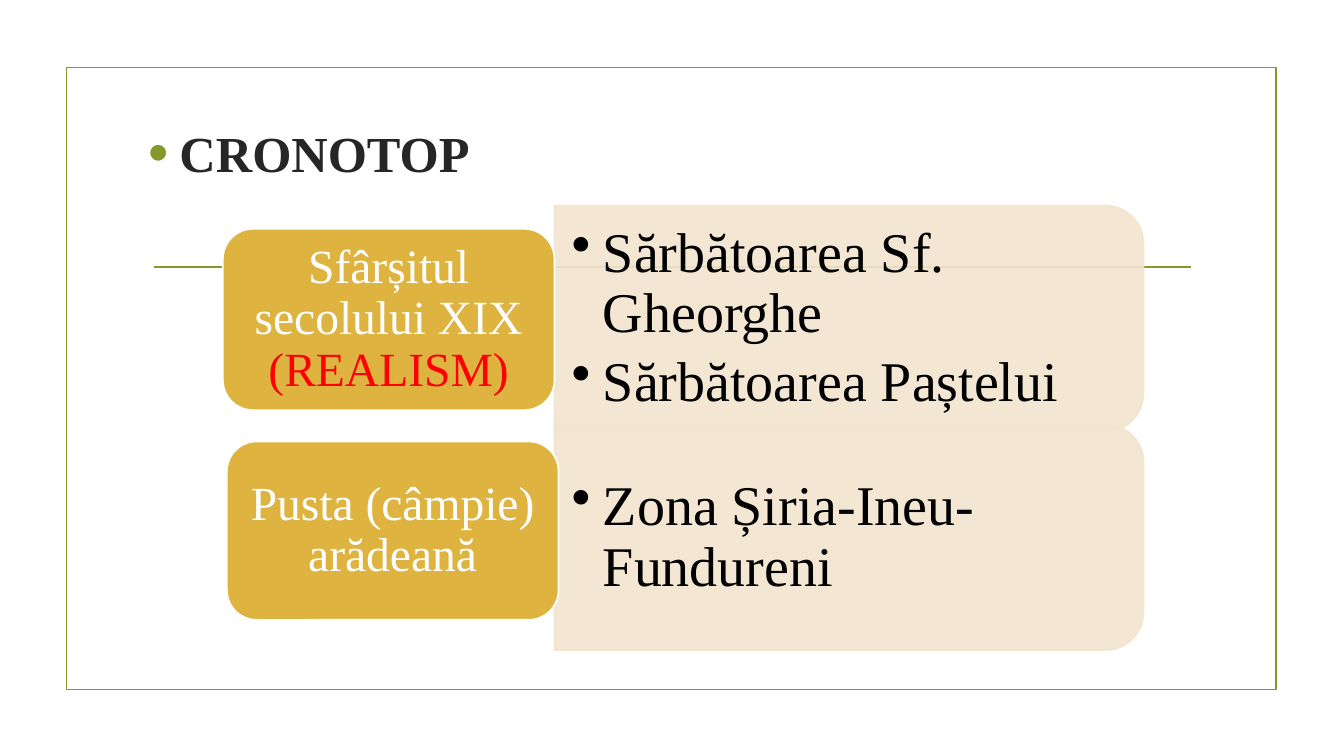
"""Build the CRONOTOP slide: two time-and-place labels, each with its list panel."""
from dataclasses import dataclass

from lxml.etree import SubElement
from pptx import Presentation
from pptx.dml.color import RGBColor
from pptx.enum.shapes import MSO_CONNECTOR, MSO_SHAPE
from pptx.enum.text import MSO_ANCHOR, MSO_AUTO_SIZE, PP_ALIGN
from pptx.oxml.ns import qn
from pptx.util import Emu, Pt

SCALE = 9144
FONT = "Times New Roman"
COLORS = {
    "green": "83992A",
    "dark": "262626",
    "cream": "F2E5CF",
    "gold": "DEB340",
    "white": "FFFFFF",
    "red": "FF0000",
    "black": "000000",
}


@dataclass(frozen=True)
class Row:
    """A gold label, its coloured text runs and the items of its panel."""

    label_box: tuple[int, int, int, int]
    label: tuple[tuple[str, str], ...]
    items: tuple[str, ...]


ROWS = (
    Row(
        (221, 227, 329, 180),
        (("Sfârșitul secolului XIX ", "white"), ("(REALISM)", "red")),
        ("Sărbătoarea Sf. Gheorghe", "Sărbătoarea Paștelui"),
    ),
    Row(
        (225, 438, 329, 177),
        (("Pusta (câmpie) arădeană", "white"),),
        ("Zona Șiria-Ineu-Fundureni",),
    ),
)
PANEL_BOX = (730, 24, 224, 584)
ITEMS_BOX = (550, 215, 573, 203)
ROW_PITCH = 217


def px(*values: int) -> list[Emu]:
    """Turn px into EMU."""
    return [Emu(v * SCALE) for v in values]


def rgb(name: str) -> RGBColor:
    """Look up a named colour."""
    return RGBColor.from_string(COLORS[name])


def shift(box: tuple[int, int, int, int], dy: int) -> tuple[int, int, int, int]:
    """Move a box down by dy px."""
    left, top, width, height = box
    return left, top + dy, width, height


def add_run(p, text: str, size: int, color: str, bold: bool = False) -> None:
    """Append one formatted run to a paragraph."""
    r = p.add_run()
    r.text = text
    r.font.name = FONT
    r.font.size = Pt(size)
    r.font.bold = bold
    r.font.color.rgb = rgb(color)


def add_bullet(p, color: str, percent: int = 100) -> None:
    """Give a paragraph a hanging round bullet."""
    pPr = p._p.get_or_add_pPr()
    indent = px(31)[0]
    pPr.set("marL", str(indent))
    pPr.set("indent", str(-indent))
    clr = SubElement(pPr, qn("a:buClr"))
    SubElement(clr, qn("a:srgbClr"), val=COLORS[color])
    SubElement(pPr, qn("a:buSzPct"), val=str(percent * 1000))
    SubElement(pPr, qn("a:buChar"), char="•")


def set_frame(tf, dx: int, dy: int) -> None:
    """Wrap and centre a text frame vertically with the given insets."""
    tf.word_wrap = True
    tf.vertical_anchor = MSO_ANCHOR.MIDDLE
    tf.margin_left = tf.margin_right = px(dx)[0]
    tf.margin_top = tf.margin_bottom = px(dy)[0]


def add_box(s, kind: MSO_SHAPE, box: tuple[int, int, int, int],
            fill: str | None, line: str):
    """Add a flat preset shape."""
    sp = s.shapes.add_shape(kind, *px(*box))
    sp.shadow.inherit = False
    if fill:
        sp.fill.solid()
        sp.fill.fore_color.rgb = rgb(fill)
    else:
        sp.fill.background()
    sp.line.color.rgb = rgb(line)
    sp.line.width = Pt(1.25)
    return sp


def add_backdrop(s) -> None:
    """Draw the green frame and rule."""
    add_box(s, MSO_SHAPE.RECTANGLE, (66, 67, 1200, 617), None, "green")
    rule = s.shapes.add_connector(MSO_CONNECTOR.STRAIGHT, *px(153, 265, 1181, 265))
    rule.line.color.rgb = rgb("green")
    rule.line.width = Pt(1.25)
    SubElement(rule._element.spPr, qn("a:effectLst"))


def fill_body(s) -> None:
    """Place the heading bullet in the body placeholder."""
    title = s.shapes.title._element
    title.getparent().remove(title)
    sp = s.placeholders[1]
    sp.left, sp.top, sp.width, sp.height = px(137, 116, 1054, 526)
    tf = sp.text_frame
    tf.auto_size = MSO_AUTO_SIZE.NONE
    p = tf.paragraphs[0]
    add_bullet(p, "green", 115)
    p.space_before = Pt(0)
    p.space_after = Pt(6)
    add_run(p, "CRONOTOP", 36, "dark", bold=True)


def add_panel(s, items: tuple[str, ...], dy: int) -> None:
    """Draw a translucent panel and its bulleted items."""
    sp = add_box(s, MSO_SHAPE.ROUND_2_SAME_RECTANGLE, shift(PANEL_BOX, dy),
                 "cream", "cream")
    sp.rotation = 90
    for clr in sp._element.spPr.iter(qn("a:srgbClr")):
        SubElement(clr, qn("a:alpha"), val="90000")
    tf = s.shapes.add_textbox(*px(*shift(ITEMS_BOX, dy))).text_frame
    set_frame(tf, 17, 8)
    for i, item in enumerate(items):
        p = tf.add_paragraph() if i else tf.paragraphs[0]
        add_bullet(p, "black")
        p.line_spacing = 0.9
        p.space_after = Pt(6)
        add_run(p, item, 40, "black")


def add_label(s, row: Row) -> None:
    """Draw a gold label with centred text."""
    sp = add_box(s, MSO_SHAPE.ROUNDED_RECTANGLE, row.label_box, "gold", "white")
    tf = sp.text_frame
    set_frame(tf, 14, 7)
    p = tf.paragraphs[0]
    p.alignment = PP_ALIGN.CENTER
    p.line_spacing = 0.9
    p.space_after = Pt(12)
    for text, color in row.label:
        add_run(p, text, 34, color)


def main() -> None:
    """Build and save the slide."""
    prs = Presentation()
    prs.slide_width, prs.slide_height = px(1333, 750)
    s = prs.slides.add_slide(prs.slide_layouts[1])
    add_backdrop(s)
    fill_body(s)
    for i, row in enumerate(ROWS):
        add_panel(s, row.items, i * ROW_PITCH)
        add_label(s, row)
    prs.save("out.pptx")


if __name__ == "__main__":
    main()
